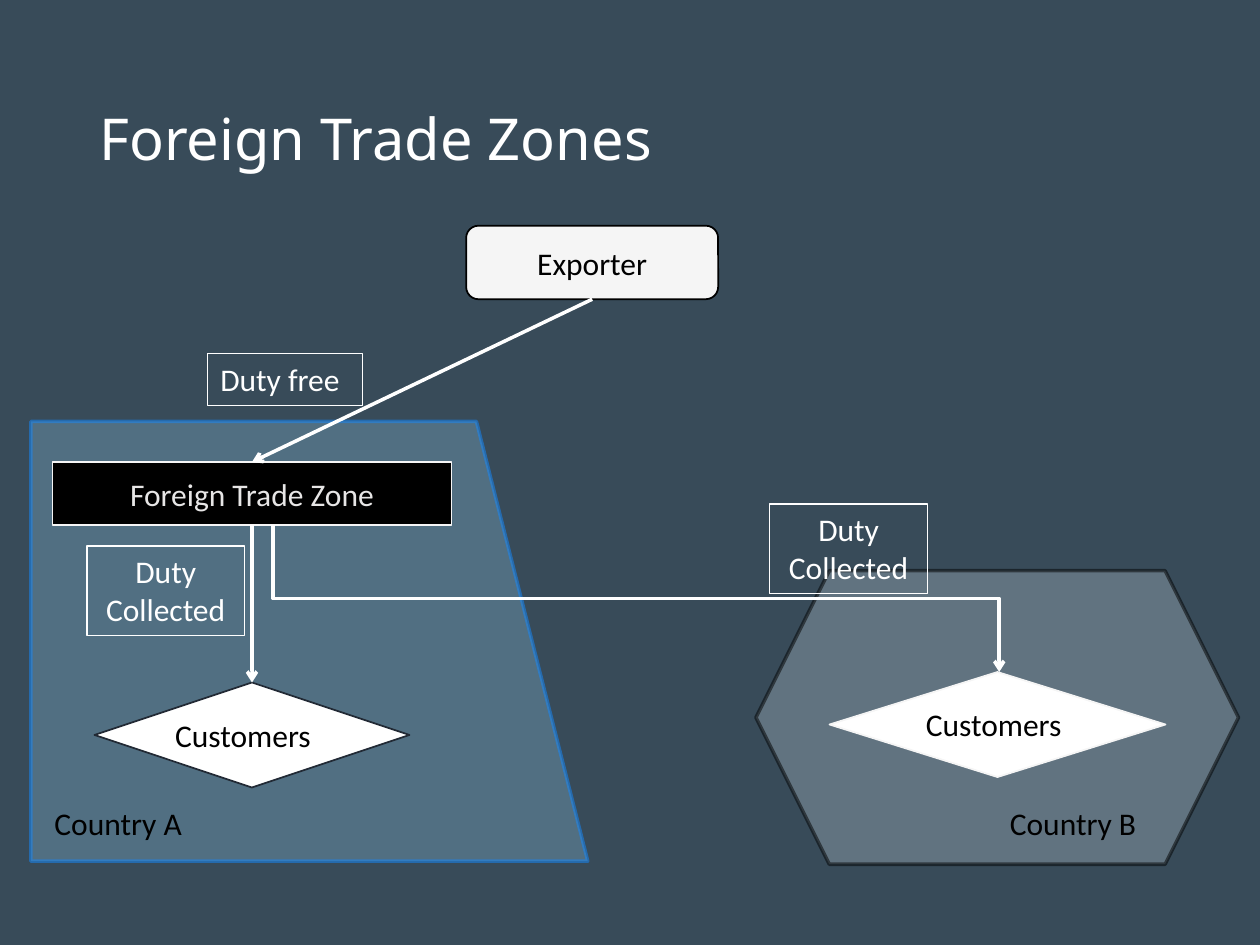
from lxml import etree
from pptx import Presentation
from pptx import util as u
from pptx.dml.color import RGBColor
from pptx.enum import shapes, text
from pptx.oxml.ns import qn

COLORS = {
    "background": "384B59", "white": "FFFFFF", "black": "000000",
    "pale": "F5F5F5", "gray": "E7E6E6", "navy": "222A35",
    "country_a": "9EDBFF", "border_a": "1489FF", "country_b": "DEEBF7",
}
SLIDE_WIDTH, SLIDE_HEIGHT = u.Inches(10), u.Inches(7.5)
COLUMNS, ROWS = 120, 90
KIND = shapes.MSO_SHAPE
ALIGN = text.PP_ALIGN
MIDDLE = text.MSO_ANCHOR.MIDDLE
TOP, BOTTOM = 0, 2

SHAPES = [
    ("exporter", KIND.ROUNDED_RECTANGLE, (44.4, 21.5, 24, 7), "Exporter",
     dict(fill="pale", line="black"), dict(color="black")),
    ("country_a", KIND.FLOWCHART_MANUAL_INPUT, (8.52, 34.56, 41.88, 53.04), "",
     dict(fill="country_a", line="border_a", width=2, fill_alpha=25, line_alpha=50, rotation=90), {}),
    ("country_b", KIND.HEXAGON, (72, 54.36, 45.96, 27.96), "",
     dict(fill="country_b", line="black", width=2, fill_alpha=25, line_alpha=50), {}),
    ("zone", KIND.RECTANGLE, (5, 44, 38, 6), "Foreign Trade Zone",
     dict(fill="black", line="pale"), dict(color="gray")),
    ("customers_a", KIND.FLOWCHART_DECISION, (9, 65, 30, 10), "",
     dict(fill="white", line="navy"), {}),
    ("customers_b", KIND.FLOWCHART_DECISION, (79, 64, 32, 10), "",
     dict(fill="white", line="pale"), {}),
]
ARROWS = [("exporter", "zone"), ("zone", "customers_a")]
BENT_ARROW = ((26, 50), (95.16, 64))
DUTY_LABELS = [
    ("Duty free", (19.8, 33.7, 14.7, 4.9), ALIGN.LEFT),
    ("Duty\nCollected", (8.28, 52, 15, 8.5), ALIGN.CENTER),
    ("Duty\nCollected", (73.32, 48, 15, 8.5), ALIGN.CENTER),
]
CAPTIONS = [
    ("Country A", (4, 76, 15.7, 4.8)),
    ("Country B", (95, 76, 15.7, 4.8)),
    ("Customers", (15.5, 67.6, 19, 4.8)),
    ("Customers", (87, 66.6, 17, 4.8)),
]


def across(columns):
    return round(SLIDE_WIDTH * columns / COLUMNS)


def down(rows):
    return round(SLIDE_HEIGHT * rows / ROWS)


def place(box):
    left, top, width, height = box
    return across(left), down(top), across(width), down(height)


def rgb(name):
    return RGBColor.from_string(COLORS[name])


def write(shape, content, color="white", size=18, font="Calibri",
          align=ALIGN.CENTER, anchor=MIDDLE, spacing=None):
    frame = shape.text_frame
    frame.word_wrap = True
    frame.vertical_anchor = anchor
    frame.text = content
    for paragraph in frame.paragraphs:
        paragraph.alignment = align
        paragraph.line_spacing = spacing
        for run in paragraph.runs:
            run.font.name = font
            run.font.size = u.Pt(size)
            run.font.color.rgb = rgb(color)


def set_alpha(fill_format, percent):
    color = fill_format.fore_color
    element = color._xFill.find(qn("a:srgbClr"))
    etree.SubElement(element, qn("a:alpha"), val=str(percent * 1000))


def draw_shape(slide, kind, box, fill=None, line="white", width=1,
               fill_alpha=None, line_alpha=None, rotation=0):
    shape = slide.shapes.add_shape(kind, *place(box))
    shape.shadow.inherit = False
    shape.rotation = rotation
    if fill:
        shape.fill.solid()
        shape.fill.fore_color.rgb = rgb(fill)
    else:
        shape.fill.background()
    shape.line.color.rgb = rgb(line)
    shape.line.width = u.Pt(width)
    if fill_alpha:
        set_alpha(shape.fill, fill_alpha)
    if line_alpha:
        set_alpha(shape.line.fill, line_alpha)
    return shape


def style_arrow(connector):
    connector.line.color.rgb = rgb("white")
    connector.line.width = u.Pt(2)
    etree.SubElement(connector.line._get_or_add_ln(), qn("a:tailEnd"), type="arrow")
    etree.SubElement(connector._element.spPr, qn("a:effectLst"))


def draw_bent_arrow(slide, start, end):
    start_x, start_y = across(start[0]), down(start[1])
    end_x, end_y = across(end[0]), down(end[1])
    center_x, center_y = (start_x + end_x) // 2, (start_y + end_y) // 2
    half_width, half_height = (end_y - start_y) // 2, (end_x - start_x) // 2
    connector = slide.shapes.add_connector(
        shapes.MSO_CONNECTOR.ELBOW,
        center_x + half_width, center_y - half_height,
        center_x - half_width, center_y + half_height)
    connector._element.spPr.find(qn("a:xfrm")).set("rot", str(270 * 60000))
    style_arrow(connector)


def main():
    presentation = Presentation()
    presentation.slide_width, presentation.slide_height = SLIDE_WIDTH, SLIDE_HEIGHT
    slide = presentation.slides.add_slide(presentation.slide_layouts[6])
    slide.background.fill.solid()
    slide.background.fill.fore_color.rgb = rgb("background")

    title = slide.shapes.add_textbox(*place((8.28, 4.8, 103.44, 17.4)))
    write(title, "Foreign Trade Zones", size=33, font="Noto Sans",
          align=ALIGN.LEFT, spacing=0.9)

    drawn = {}
    for name, kind, box, content, look, text_format in SHAPES:
        drawn[name] = draw_shape(slide, kind, box, **look)
        if content:
            write(drawn[name], content, **text_format)

    for source, target in ARROWS:
        connector = slide.shapes.add_connector(shapes.MSO_CONNECTOR.STRAIGHT, 0, 0, 0, 0)
        connector.begin_connect(drawn[source], BOTTOM)
        connector.end_connect(drawn[target], TOP)
        style_arrow(connector)
    draw_bent_arrow(slide, *BENT_ARROW)

    for content, box in CAPTIONS:
        caption = slide.shapes.add_textbox(*place(box))
        write(caption, content, color="black", align=ALIGN.LEFT, anchor=text.MSO_ANCHOR.TOP)
    for content, box, align in DUTY_LABELS:
        label = draw_shape(slide, KIND.RECTANGLE, box, width=0.75)
        write(label, content, align=align, anchor=text.MSO_ANCHOR.TOP)

    presentation.save("out.pptx")


if __name__ == "__main__":
    main()
